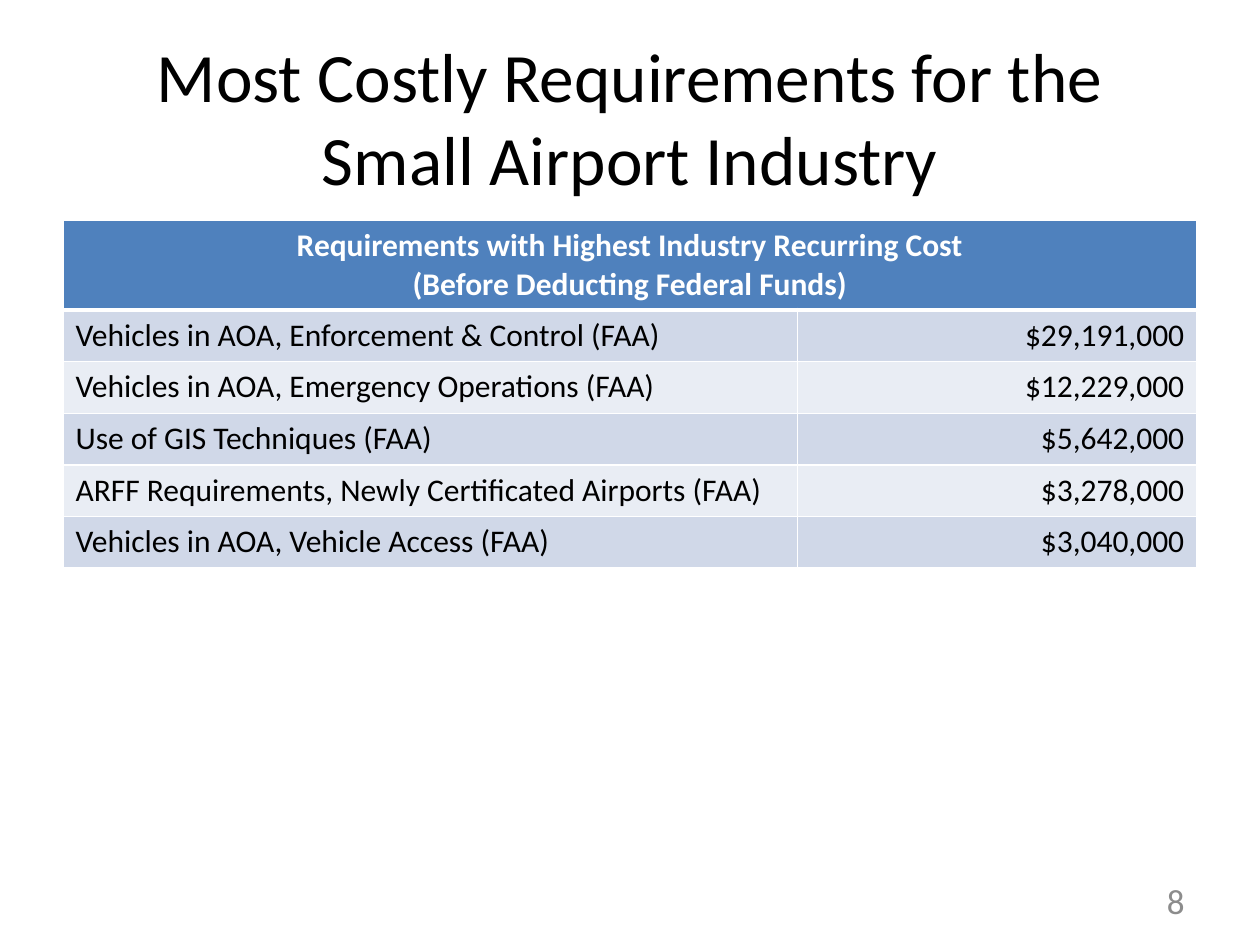
from lxml.etree import SubElement
from pptx import Presentation
from pptx.dml.color import RGBColor
from pptx.enum.text import MSO_ANCHOR as Anchor, PP_ALIGN as Align
from pptx.oxml.ns import qn
from pptx.util import Inches, Pt

TITLE = "Most Costly Requirements for the Small Airport Industry"
HEADER = ["Requirements with Highest Industry Recurring Cost", "(Before Deducting Federal Funds)"]
COSTS = [
    ("Vehicles in AOA, Enforcement & Control (FAA)", "$29,191,000"),
    ("Vehicles in AOA, Emergency Operations (FAA)", "$12,229,000"),
    ("Use of GIS Techniques (FAA)", "$5,642,000"),
    ("ARFF Requirements, Newly Certificated Airports (FAA)", "$3,278,000"),
    ("Vehicles in AOA, Vehicle Access (FAA)", "$3,040,000"),
]
PAGE_NUMBER = "8"

THEME = {
    "font": "Calibri",
    "title_size": 39.6, "table_size": 18, "number_size": 20,
    "text": "000000", "white": "FFFFFF", "number": "8C8C8C",
    "header": "4F81BD", "bands": ("D0D8E8", "E9EDF4"),
    "border": 1, "header_border": 3,
}
COLUMN_WIDTHS = (5.83, 3.17)
HEADER_HEIGHT, ROW_HEIGHT = 0.69, 0.41


def write(text_frame, lines, size, color, align, bold=False):
    paragraph = text_frame.paragraphs[0]
    paragraph.alignment = align
    for index, line in enumerate(lines):
        if index:
            paragraph.add_line_break()
        run = paragraph.add_run()
        run.text = line
        run.font.name = THEME["font"]
        run.font.size = Pt(size)
        run.font.bold = bold
        run.font.color.rgb = RGBColor.from_string(color)


def style_cell(cell, fill, top, bottom):
    properties = cell._tc.get_or_add_tcPr()
    widths = {"L": THEME["border"], "R": THEME["border"], "T": top, "B": bottom}
    for side, width in widths.items():
        line = SubElement(properties, qn(f"a:ln{side}"), w=str(Pt(width)))
        solid = SubElement(line, qn("a:solidFill"))
        SubElement(solid, qn("a:srgbClr"), val=THEME["white"])
    cell.fill.solid()
    cell.fill.fore_color.rgb = RGBColor.from_string(fill)


def add_title(slide):
    title = slide.shapes.title
    title.left, title.top, title.width, title.height = map(Inches, (0.5, 0.3, 9, 1.25))
    title.text_frame.word_wrap = True
    title.text_frame.vertical_anchor = Anchor.MIDDLE
    write(title.text_frame, [TITLE], THEME["title_size"], THEME["text"], Align.CENTER)


def add_cost_table(slide):
    height = HEADER_HEIGHT + ROW_HEIGHT * len(COSTS)
    table = slide.shapes.add_table(
        len(COSTS) + 1, len(COLUMN_WIDTHS),
        Inches(0.5), Inches(1.75), Inches(sum(COLUMN_WIDTHS)), Inches(height),
    ).table
    for column, width in zip(table.columns, COLUMN_WIDTHS):
        column.width = Inches(width)
    for index, row in enumerate(table.rows):
        row.height = Inches(ROW_HEIGHT if index else HEADER_HEIGHT)
        fill = THEME["bands"][(index - 1) % 2] if index else THEME["header"]
        top = THEME["header_border"] if index == 1 else THEME["border"]
        bottom = THEME["border"] if index else THEME["header_border"]
        for cell in row.cells:
            style_cell(cell, fill, top, bottom)

    header = table.cell(0, 0)
    header.merge(table.cell(0, len(COLUMN_WIDTHS) - 1))
    write(header.text_frame, HEADER, THEME["table_size"], THEME["white"], Align.CENTER, bold=True)
    for row_index, values in enumerate(COSTS, start=1):
        for column_index, (value, align) in enumerate(zip(values, (Align.LEFT, Align.RIGHT))):
            frame = table.cell(row_index, column_index).text_frame
            write(frame, [value], THEME["table_size"], THEME["text"], align)


def add_page_number(slide):
    box = slide.shapes.add_textbox(Inches(7.17), Inches(6.95), Inches(2.33), Inches(0.4))
    box.text_frame.word_wrap = True
    box.text_frame.vertical_anchor = Anchor.MIDDLE
    write(box.text_frame, [PAGE_NUMBER], THEME["number_size"], THEME["number"], Align.RIGHT)


def main():
    presentation = Presentation()
    presentation.slide_width, presentation.slide_height = Inches(10), Inches(7.5)
    slide = presentation.slides.add_slide(presentation.slide_layouts[5])
    add_title(slide)
    add_cost_table(slide)
    add_page_number(slide)
    presentation.save("out.pptx")


if __name__ == "__main__":
    main()
